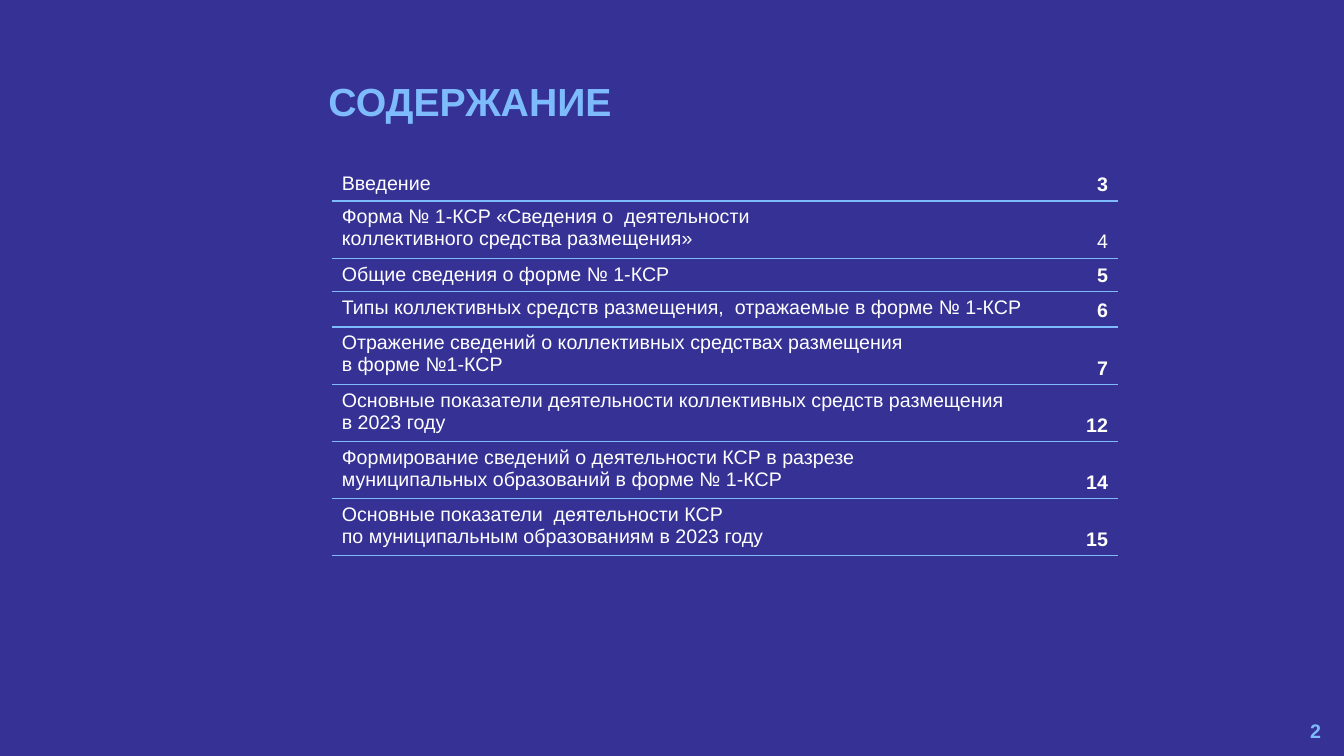
from pptx import Presentation
from pptx.dml.color import RGBColor
from pptx.enum.text import MSO_ANCHOR, PP_ALIGN
from pptx.oxml import parse_xml
from pptx.oxml.ns import nsdecls, qn
from pptx.util import Inches, Pt

INDIGO = RGBColor(0x36, 0x31, 0x94)
SKY = RGBColor(0x7D, 0xBB, 0xFC)
WHITE = RGBColor(0xFF, 0xFF, 0xFF)
FONT = "Arial"
NO_GRID_STYLE = "{2D5ABB26-0587-4C30-8999-92F81FD0307C}"

# Entry, page number, page in bold, row height
CONTENTS = [
    ("Введение", 3, True, 0.32),
    ("Форма № 1-КСР «Сведения о  деятельности\n"
     "коллективного средства размещения»", 4, False, 0.51),
    ("Общие сведения о форме № 1-КСР", 5, True, 0.33),
    ("Типы коллективных средств размещения,  отражаемые в форме № 1-КСР",
     6, True, 0.35),
    ("Отражение сведений о коллективных средствах размещения\n"
     "в форме №1-КСР", 7, True, 0.51),
    ("Основные показатели деятельности коллективных средств размещения\n"
     "в 2023 году", 12, True, 0.51),
    ("Формирование сведений о деятельности КСР в разрезе\n"
     "муниципальных образований в форме № 1-КСР", 14, True, 0.51),
    ("Основные показатели  деятельности КСР\n"
     "по муниципальным образованиям в 2023 году", 15, True, 0.51),
]


def set_text(tf, text, size, color, bold=False, align=PP_ALIGN.LEFT):
    tf.text = text
    for p in tf.paragraphs:
        p.alignment = align
        p.font.name = FONT
        p.font.size = Pt(size)
        p.font.bold = bold
        p.font.color.rgb = color


def add_label(s, box, text, size, align=PP_ALIGN.LEFT, anchor=MSO_ANCHOR.TOP):
    tf = s.shapes.add_textbox(*map(Inches, box)).text_frame
    tf.word_wrap = True
    tf.vertical_anchor = anchor
    set_text(tf, text, size, SKY, True, align)
    return tf


def underline_cell(cell):
    cell.fill.background()
    line = parse_xml(
        f'<a:lnB {nsdecls("a")} w="{Pt(1)}"><a:solidFill>'
        f'<a:srgbClr val="{SKY}"/></a:solidFill></a:lnB>')
    cell._tc.get_or_add_tcPr().insert(0, line)


def add_contents(s, left, top, width, page_width):
    height = sum(row[3] for row in CONTENTS)
    frame = s.shapes.add_table(len(CONTENTS), 2, Inches(left), Inches(top),
                               Inches(width), Inches(height))
    table = frame.table
    table.first_row = table.horz_banding = False
    table._tbl.tblPr.find(qn("a:tableStyleId")).text = NO_GRID_STYLE
    table.columns[0].width = Inches(width - page_width)
    table.columns[1].width = Inches(page_width)

    for i, (entry, page, bold, row_height) in enumerate(CONTENTS):
        table.rows[i].height = Inches(row_height)
        entry_cell, page_cell = table.cell(i, 0), table.cell(i, 1)
        set_text(entry_cell.text_frame, entry, 14, WHITE)
        set_text(page_cell.text_frame, str(page), 14, WHITE, bold,
                 PP_ALIGN.RIGHT)
        page_cell.vertical_anchor = MSO_ANCHOR.BOTTOM
        underline_cell(entry_cell)
        underline_cell(page_cell)


def main():
    prs = Presentation()
    prs.slide_width, prs.slide_height = Inches(13.33), Inches(7.5)
    s = prs.slides.add_slide(prs.slide_layouts[6])
    s.background.fill.solid()
    s.background.fill.fore_color.rgb = INDIGO

    # Title
    title = add_label(s, (3.16, 0.77, 10, 1.11), "СОДЕРЖАНИЕ", 28)
    title.paragraphs[0].line_spacing = 0.9

    # Table of contents
    add_contents(s, 3.29, 1.66, 7.8, 0.69)

    # Slide number
    add_label(s, (10.2, 7.05, 3, 0.4), "2", 14, PP_ALIGN.RIGHT,
              MSO_ANCHOR.MIDDLE)

    prs.save("out.pptx")


if __name__ == "__main__":
    main()
